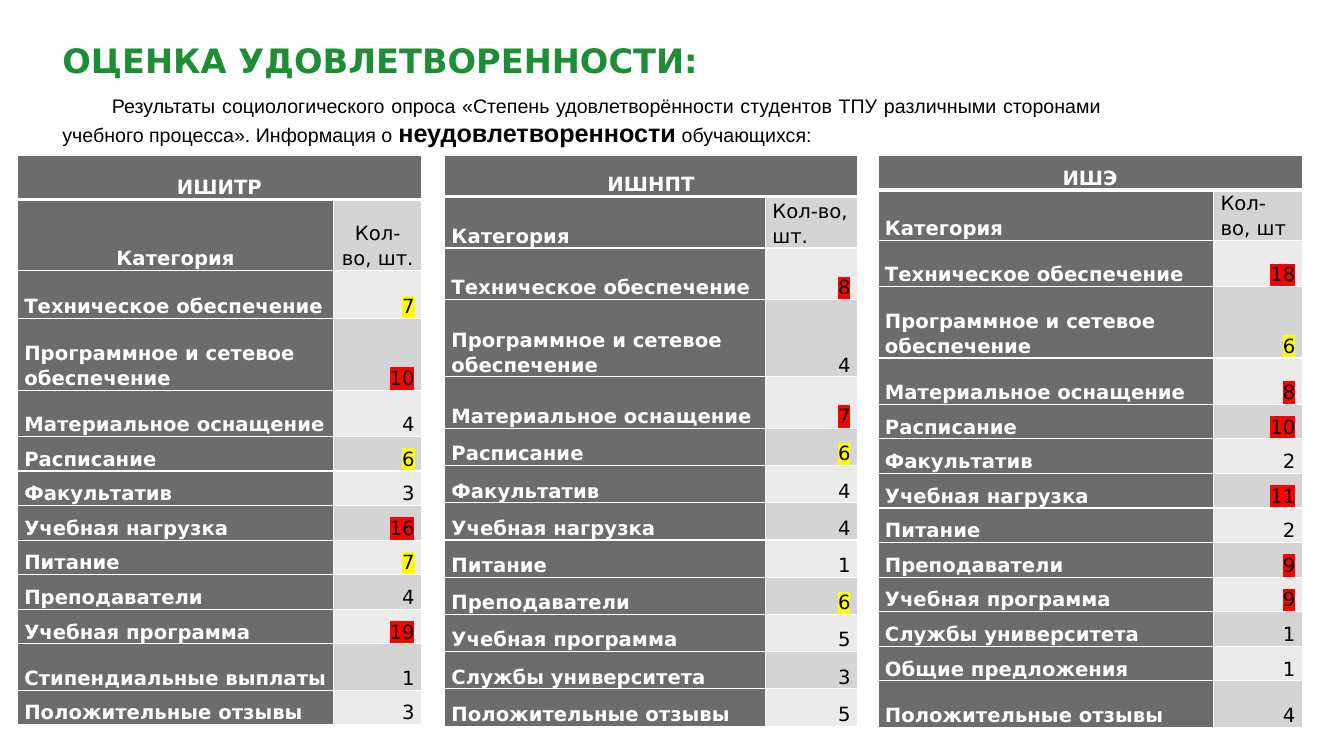
from lxml.etree import SubElement
from pptx import Presentation
from pptx.dml.color import RGBColor
from pptx.enum.text import MSO_ANCHOR, MSO_AUTO_SIZE, PP_ALIGN
from pptx.oxml import parse_xml
from pptx.oxml.ns import nsdecls, qn
from pptx.util import Pt

COLORS = {
    "title": "1E8E35", "text": "000000", "white": "FFFFFF", "category": "6B6C6B",
    "odd": "D4D4D4", "even": "EBEBEB", "red": "FF0000", "yellow": "FFFF00",
}
TABLE_FONT = "DejaVu Sans"

TECHNICAL = "Техническое обеспечение"
SOFTWARE = "Программное и сетевое обеспечение"
MATERIAL = "Материальное оснащение"
SCHEDULE = "Расписание"
ELECTIVE = "Факультатив"
WORKLOAD = "Учебная нагрузка"
FOOD = "Питание"
TEACHERS = "Преподаватели"
PROGRAMME = "Учебная программа"
SERVICES = "Службы университета"
POSITIVE = "Положительные отзывы"

# Each school: box, count column width, row heights, header and (category, count, mark)
SCHOOLS = [
    {
        "name": "ИШИТР", "left": 12.4, "width": 288.7, "count_width": 62.6,
        "heights": [31.7, 50.4, 34.6, 51.1, 33.1] + [24.7] * 6 + [33.1, 24.7],
        "count_header": "Кол-во, шт.", "header_align": PP_ALIGN.CENTER,
        "ratings": [
            (TECHNICAL, 7, "yellow"), (SOFTWARE, 10, "red"), (MATERIAL, 4, None),
            (SCHEDULE, 6, "yellow"), (ELECTIVE, 3, None), (WORKLOAD, 16, "red"),
            (FOOD, 7, "yellow"), (TEACHERS, 4, None), (PROGRAMME, 19, "red"),
            ("Стипендиальные выплаты", 1, None), (POSITIVE, 3, None),
        ],
    },
    {
        "name": "ИШНПТ", "left": 317.5, "width": 295, "count_width": 65.8,
        "heights": [29.5, 36.8, 36.8, 55.2, 36.8] + [26.6] * 8,
        "count_header": "Кол-во, шт.", "header_align": PP_ALIGN.LEFT,
        "ratings": [
            (TECHNICAL, 8, "red"), (SOFTWARE, 4, None), (MATERIAL, 7, "red"),
            (SCHEDULE, 6, "yellow"), (ELECTIVE, 4, None), (WORKLOAD, 4, None),
            (FOOD, 1, None), (TEACHERS, 6, "yellow"), (PROGRAMME, 5, None),
            (SERVICES, 3, None), (POSITIVE, 5, None),
        ],
    },
    {
        "name": "ИШЭ", "left": 627.1, "width": 303.1, "count_width": 63.4,
        "heights": [24.7, 33.1, 33.1, 51.1, 33.1] + [24.7] * 8 + [33.1],
        "count_header": "Кол-во, шт", "header_align": PP_ALIGN.LEFT,
        "ratings": [
            (TECHNICAL, 18, "red"), (SOFTWARE, 6, "yellow"), (MATERIAL, 8, "red"),
            (SCHEDULE, 10, "red"), (ELECTIVE, 2, None), (WORKLOAD, 11, "red"),
            (FOOD, 2, None), (TEACHERS, 9, "red"), (PROGRAMME, 9, "red"),
            (SERVICES, 1, None), ("Общие предложения", 1, None), (POSITIVE, 4, None),
        ],
    },
]


def format_run(run, font_name, size, color, bold=False):
    run.font.name = font_name
    run.font.size = Pt(size)
    run.font.bold = bold
    run.font.color.rgb = RGBColor.from_string(COLORS[color])


def highlight_run(run, color):
    highlight = parse_xml(f'<a:highlight {nsdecls("a")}><a:srgbClr val="{COLORS[color]}"/></a:highlight>')
    run.font.fill._xPr.find(qn("a:solidFill")).addnext(highlight)


def set_borders(cell, top=1, bottom=1):
    properties = cell._tc.get_or_add_tcPr()
    for side, width in (("L", 1), ("R", 1), ("T", top), ("B", bottom)):
        line = SubElement(properties, qn(f"a:ln{side}"), w=str(Pt(width)))
        fill = SubElement(line, qn("a:solidFill"))
        SubElement(fill, qn("a:srgbClr"), val=COLORS["white"])


def fill_cell(cell, text, fill, color, align, bold=False, mark=None):
    cell.fill.solid()
    cell.fill.fore_color.rgb = RGBColor.from_string(COLORS[fill])
    cell.vertical_anchor = MSO_ANCHOR.BOTTOM
    cell.margin_left = cell.margin_right = Pt(5)
    cell.margin_top = cell.margin_bottom = Pt(0)
    cell.text_frame.text = text
    paragraph = cell.text_frame.paragraphs[0]
    paragraph.alignment = align
    paragraph.line_spacing = 1.07
    run = paragraph.runs[0]
    format_run(run, TABLE_FONT, 14, color, bold)
    if mark:
        highlight_run(run, mark)


def add_title(slide, left, top, width, height):
    title = slide.shapes.title
    title.left, title.top, title.width, title.height = Pt(left), Pt(top), Pt(width), Pt(height)
    text_frame = title.text_frame
    text_frame.text = "ОЦЕНКА УДОВЛЕТВОРЕННОСТИ:"
    text_frame.vertical_anchor = MSO_ANCHOR.MIDDLE
    paragraph = text_frame.paragraphs[0]
    paragraph.alignment = PP_ALIGN.LEFT
    paragraph.line_spacing = 0.9
    format_run(paragraph.runs[0], TABLE_FONT, 24, "title", True)


def add_introduction(slide, left, top, width, height):
    text_frame = slide.shapes.add_textbox(Pt(left), Pt(top), Pt(width), Pt(height)).text_frame
    text_frame.word_wrap = True
    text_frame.auto_size = MSO_AUTO_SIZE.SHAPE_TO_FIT_TEXT
    text_frame.vertical_anchor = MSO_ANCHOR.MIDDLE
    paragraph = text_frame.paragraphs[0]
    paragraph.alignment = PP_ALIGN.JUSTIFY
    paragraph._p.get_or_add_pPr().set("indent", str(Pt(35.4)))
    for text, size, bold in (
        ("Результаты социологического опроса «Степень удовлетворённости студентов ТПУ "
         "различными сторонами учебного процесса». Информация о ", 14, False),
        ("неудовлетворенности", 18, True),
        (" обучающихся:", 14, False),
    ):
        run = paragraph.add_run()
        run.text = text
        format_run(run, "Arial", size, "text", bold)


def add_school_table(slide, school, top):
    heights, width = school["heights"], school["width"]
    table = slide.shapes.add_table(
        len(heights), 2, Pt(school["left"]), Pt(top), Pt(width), Pt(sum(heights))).table
    table.columns[0].width = Pt(width - school["count_width"])
    table.columns[1].width = Pt(school["count_width"])
    for index, height in enumerate(heights):
        table.rows[index].height = Pt(height)
        for column in range(2):
            # Thick rule under the school name
            set_borders(table.cell(index, column),
                        top=3 if index == 1 else 1, bottom=3 if index == 0 else 1)

    # School name and column headers
    table.cell(0, 0).merge(table.cell(0, 1))
    fill_cell(table.cell(0, 0), school["name"], "category", "white", PP_ALIGN.CENTER, True)
    align = school["header_align"]
    fill_cell(table.cell(1, 0), "Категория", "category", "white", align, True)
    fill_cell(table.cell(1, 1), school["count_header"], "odd", "text", align)

    # Categories and counts
    for index, (category, count, mark) in enumerate(school["ratings"], start=2):
        fill_cell(table.cell(index, 0), category, "category", "white", PP_ALIGN.LEFT, True)
        fill_cell(table.cell(index, 1), str(count), "odd" if index % 2 else "even",
                  "text", PP_ALIGN.RIGHT, mark=mark)


def main():
    presentation = Presentation()
    presentation.slide_width, presentation.slide_height = Pt(960), Pt(540)
    slide = presentation.slides.add_slide(presentation.slide_layouts[5])
    add_title(slide, 37.4, 20.9, 532.8, 47.5)
    add_introduction(slide, 37.4, 63.4, 756.7, 46.1)
    for school in SCHOOLS:
        add_school_table(slide, school, 110.9)
    presentation.save("out.pptx")


if __name__ == "__main__":
    main()
